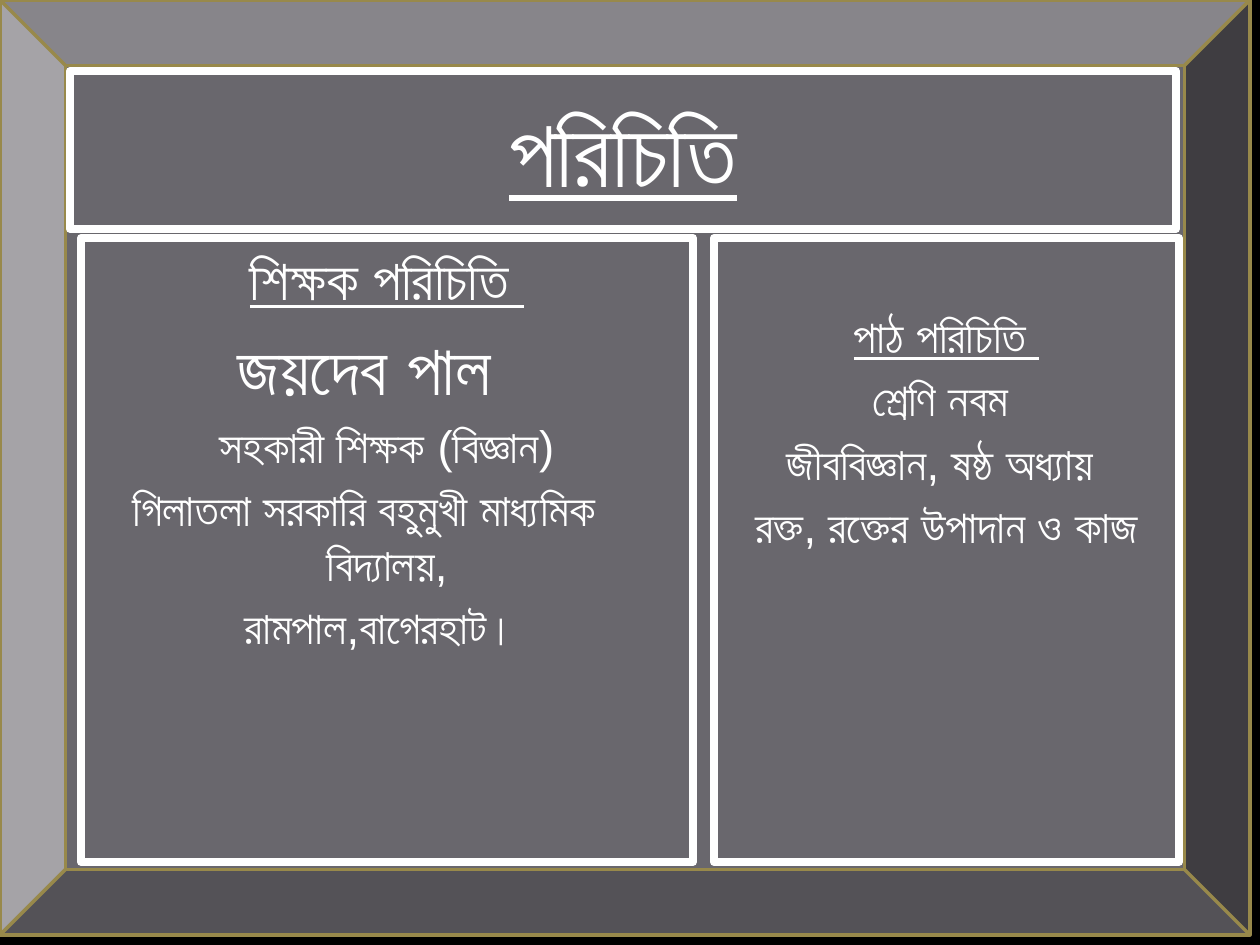
from lxml.etree import SubElement
from pptx import Presentation
from pptx.dml.color import RGBColor
from pptx.enum.shapes import MSO_SHAPE
from pptx.enum.text import MSO_ANCHOR, PP_ALIGN
from pptx.oxml.ns import qn
from pptx.util import Emu, Pt

PX = 914400 / 126
FONT = "Arial"
SHIFT = 46  # how far the teacher's name sits left of the other lines, doubled


def px(length):
    return Emu(round(length * PX))


def color(value):
    return RGBColor.from_string(value)


prs = Presentation()
prs.slide_width, prs.slide_height = px(1260), px(945)
slide = prs.slides.add_slide(prs.slide_layouts[6])
slide.background.fill.solid()
slide.background.fill.fore_color.rgb = color("000000")

frame = slide.shapes.add_shape(MSO_SHAPE.BEVEL, 0, 0, px(1250), px(935))
frame.adjustments[0] = 0.07
frame.shadow.inherit = False
frame.fill.solid()
frame.fill.fore_color.rgb = color("69676D")
frame.line.color.rgb = color("98894B")
frame.line.width = Pt(2)

# Each line: text, size, is heading, left margin, first-line indent
title_lines = [("পরিচিতি", 54, True, 0, 0)]
teacher_lines = [
    ("শিক্ষক পরিচিতি ", 32, True, SHIFT, 0),
    ("জয়দেব পাল", 40, False, 0, 0),
    ("সহকারী শিক্ষক (বিজ্ঞান)", 26, False, SHIFT, 0),
    ("গিলাতলা সরকারি বহুমুখী মাধ্যমিক বিদ্যালয়,", 26, False, SHIFT, -SHIFT),
    ("রামপাল,বাগেরহাট। ", 26, False, SHIFT, 0),
]
lesson_lines = [
    ("পাঠ পরিচিতি ", 26, True, 0, 0),
    ("শ্রেণি নবম ", 26, False, 0, 0),
    ("জীববিজ্ঞান, ষষ্ঠ অধ্যায় ", 26, False, 0, 0),
    ("রক্ত, রক্তের উপাদান ও কাজ", 26, False, 0, 0),
]

# Each panel: left, top, width, height, top inset, right inset, anchor, lines
panels = [
    (70, 71, 1106, 158, 6, 12, MSO_ANCHOR.MIDDLE, title_lines),
    (81, 238, 612, 624, 6, 12 + SHIFT, MSO_ANCHOR.TOP, teacher_lines),
    (714, 238, 465, 624, 70, 12, MSO_ANCHOR.TOP, lesson_lines),
]

for left, top, width, height, top_inset, right_inset, anchor, lines in panels:
    panel = slide.shapes.add_textbox(px(left), px(top), px(width), px(height))
    panel.line.color.rgb = color("FFFFFF")
    panel.line.width = Pt(4.5)
    content = panel.text_frame
    content.word_wrap = True
    content.vertical_anchor = anchor
    content.margin_left, content.margin_right = px(12), px(right_inset)
    content.margin_top, content.margin_bottom = px(top_inset), px(6)

    for number, (text, size, heading, margin, indent) in enumerate(lines):
        line = content.add_paragraph() if number else content.paragraphs[0]
        line.text = text
        line.alignment = PP_ALIGN.CENTER
        line.space_before = Pt(round(size * 0.2) if number else 0)
        properties = line._p.get_or_add_pPr()
        properties.set("marL", str(px(margin)))
        properties.set("indent", str(px(indent)))

        font = line.runs[0].font
        font.name = FONT
        font.size = Pt(size)
        font.bold = font.underline = heading
        font.color.rgb = color("FFFFFF")
        SubElement(font._element, qn("a:cs")).set("typeface", FONT)

prs.save("out.pptx")
